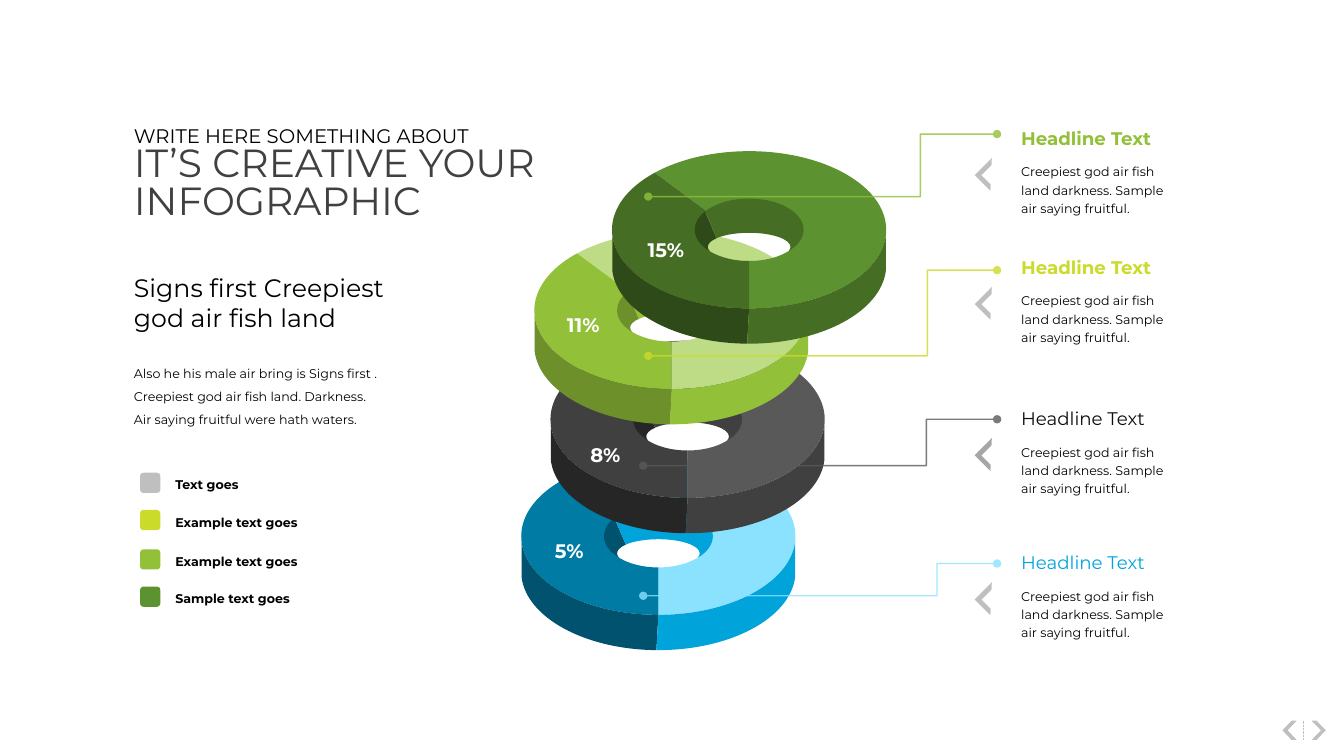
from dataclasses import dataclass
from math import cos, radians, sin, tan

from lxml.etree import SubElement
from pptx import Presentation
from pptx.dml.color import RGBColor
from pptx.enum.dml import MSO_LINE
from pptx.enum.shapes import MSO_CONNECTOR, MSO_SHAPE
from pptx.enum.text import MSO_ANCHOR, MSO_AUTO_SIZE, PP_ALIGN
from pptx.oxml.ns import qn
from pptx.util import Inches, Pt

FONT = "Montserrat"
BODY = "Creepiest god air fish land darkness. Sample air saying fruitful."
Point = tuple[int, int]


@dataclass
class Ring:
    cx: float
    cy: float
    light: str
    mid: str
    dark: str
    wall: str  # right side and right inner wall
    label: str
    label_x: float
    label_y: float


@dataclass
class Callout:
    top: float
    color: str
    bold: bool
    arrow: str
    line: str
    start_y: float
    end_x: float
    end_y: float
    bend: float


@dataclass
class Legend:
    top: float
    color: str
    text: str


@dataclass
class Run:
    text: str
    size: float
    color: str = "000000"
    bold: bool = False


@dataclass
class Arc:
    """Part of an ellipse, dy below the ring centre; angles run clockwise."""
    rx: float
    ry: float
    dy: float
    start: float
    end: float

    def nodes(self, ring: Ring) -> list[tuple[Point, list[Point]]]:
        """End point and Bezier handles of each piece, cut at the quarters."""
        low, high = sorted((self.start, self.end))
        cuts = [a for a in range(0, 541, 90) if low < a < high]
        stops = sorted([low, *cuts, high], reverse=self.start > self.end)

        def at(angle: float, pull: float = 0) -> Point:
            a = radians(angle)
            return (Inches(ring.cx + self.rx * (cos(a) - pull * sin(a))),
                    Inches(ring.cy + self.dy + self.ry * (sin(a) + pull * cos(a))))

        result = [(at(self.start), [])]
        for a, b in zip(stops, stops[1:]):
            pull = 4 / 3 * tan(radians(b - a) / 4)
            result.append((at(b), [at(a, pull), at(b, -pull)]))
        return result


RINGS = [
    Ring(6.53, 5.32, "8BE2FF", "007BA4", "00526E", "00A4DB", "5%", 5.3, 5.3),
    Ring(6.82, 4.16, "595959", "404040", "262626", "404040", "8%", 5.66, 4.34),
    Ring(6.66, 3.08, "BEDB86", "92C039", "6D902B", "92C039", "11%", 5.44, 3.06),
    Ring(7.43, 2.28, "5C9330", "456E24", "2E4A18", "456E24", "15%", 6.26, 2.31),
]
CALLOUTS = [
    Callout(1.21, "92C039", True, "BFBFBF", "92C039", 1.33, 6.43, 1.95, 0.22),
    Callout(2.49, "CBDB2A", True, "BFBFBF", "CBDB2A", 2.68, 6.43, 3.53, 0.2),
    Callout(3.99, "0D0D0D", False, "A6A6A6", "595959", 4.16, 6.38, 4.62, 0.2),
    Callout(5.42, "00A4DB", False, "BFBFBF", "8BE2FF", 5.59, 6.38, 5.91, 0.17),
]
LEGENDS = [
    Legend(4.69, "BFBFBF", "Text goes"), Legend(5.06, "CBDB2A", "Example text goes"),
    Legend(5.45, "92C039", "Example text goes"), Legend(5.82, "5C9330", "Sample text goes"),
]


def rgb(color: str) -> RGBColor:
    return RGBColor.from_string(color)


def paint(sp, color: str) -> None:
    sp.shadow.inherit = False
    sp.fill.solid()
    sp.fill.fore_color.rgb = rgb(color)
    sp.line.fill.background()


def add_preset(s, kind, x: float, y: float, w: float, h: float, color: str,
               rotation: float = 0, adjust: tuple[float, ...] = ()):
    sp = s.shapes.add_shape(kind, Inches(x), Inches(y), Inches(w), Inches(h))
    paint(sp, color)
    sp.rotation = rotation
    for i, value in enumerate(adjust):
        sp.adjustments[i] = value
    return sp


def add_text(s, x: float, y: float, w: float, h: float, runs: list[Run],
             spacing=None, align=PP_ALIGN.LEFT, anchor=MSO_ANCHOR.TOP) -> None:
    """Each run fills a paragraph of its own."""
    tf = s.shapes.add_textbox(Inches(x), Inches(y), Inches(w), Inches(h)).text_frame
    tf.word_wrap, tf.auto_size = True, MSO_AUTO_SIZE.SHAPE_TO_FIT_TEXT
    tf.vertical_anchor = anchor
    for i, run in enumerate(runs):
        p = tf.add_paragraph() if i else tf.paragraphs[0]
        p.alignment, p.line_spacing = align, spacing
        r = p.add_run()
        r.text = run.text
        r.font.name, r.font.size, r.font.bold = FONT, Pt(run.size), run.bold
        r.font.color.rgb = rgb(run.color)


def add_line(s, kind, x1: float, y1: float, x2: float, y2: float,
             color: str, width: float):
    sp = s.shapes.add_connector(kind, Inches(x1), Inches(y1), Inches(x2), Inches(y2))
    sp.line.color.rgb = rgb(color)
    sp.line.width = Pt(width)
    SubElement(sp._element.spPr, qn("a:effectLst"))
    return sp


def add_face(s, ring: Ring, color: str, *arcs: Arc) -> None:
    nodes = [node for arc in arcs for node in arc.nodes(ring)]
    builder = s.shapes.build_freeform(*nodes[0][0])
    builder.add_line_segments([point for point, _ in nodes[1:]], close=True)
    sp = builder.convert_to_shape()
    paint(sp, color)
    # Bend the straight pieces that have handles
    segments = list(sp._element.iter(qn("a:lnTo")))
    for segment, (_, handles) in zip(segments, nodes[1:]):
        if handles:
            end = segment[0]
            segment.tag = qn("a:cubicBezTo")
            for x, y in handles:
                SubElement(segment, qn("a:pt"), x=str(x - sp.left), y=str(y - sp.top))
            segment.append(end)


def add_ring(s, ring: Ring) -> None:
    def outer(start: float, end: float, dy: float = 0) -> Arc:
        return Arc(1.36, 0.78, dy, start, end)

    def hole(start: float, end: float) -> Arc:
        return Arc(0.53, 0.3, 0.01, start, end)

    def rim(start: float, end: float) -> Arc:
        return Arc(0.54, 0.31, 0, start, end)

    def floor(start: float, end: float) -> Arc:
        return Arc(0.41, 0.14, 0.17, start, end)

    # Top face, inner wall, outer side
    add_face(s, ring, ring.light, outer(226.5, 450), hole(450, 219))
    add_face(s, ring, ring.mid, outer(90, 226.5), hole(219, 90))
    add_face(s, ring, ring.dark, rim(137, 216), floor(218, 163))
    add_face(s, ring, ring.wall, rim(216, 403), floor(377, 218))
    add_face(s, ring, ring.dark, outer(176, 90), outer(90.8, 176, 0.35))
    add_face(s, ring, ring.wall, outer(90, 4), outer(4, 90.8, 0.35))


def add_callout(s, c: Callout) -> None:
    add_text(s, 10.03, c.top + 0.34, 1.66, 0.65, [Run(BODY, 9)], Pt(13))
    add_text(s, 10.03, c.top, 1.66, 0.32, [Run("Headline Text", 13, c.color, c.bold)])
    sp = add_preset(s, MSO_SHAPE.HALF_FRAME, 9.72, c.top + 0.4, 0.22, 0.24,
                    c.arrow, 225, (0.21, 0.22))
    sp._element.spPr.xfrm.set("flipH", "1")
    # Elbow line with a dot at each end
    sp = add_line(s, MSO_CONNECTOR.ELBOW, 9.89, c.start_y, c.end_x, c.end_y, c.line, 1)
    geometry = sp._element.spPr.find(qn("a:prstGeom"))
    SubElement(geometry.find(qn("a:avLst")), qn("a:gd"),
               name="adj1", fmla=f"val {round(c.bend * 100000)}")
    ln = sp.line._get_or_add_ln()
    SubElement(next(ln.iter(qn("a:srgbClr"))), qn("a:alpha"), val="80000")
    for end in ("a:headEnd", "a:tailEnd"):
        SubElement(ln, qn(end), type="oval")


prs = Presentation()
prs.slide_width, prs.slide_height = Inches(13.33), Inches(7.5)
s = prs.slides.add_slide(prs.slide_layouts[6])

# Page arrows
add_preset(s, MSO_SHAPE.CHEVRON, 13.01, 7.15, 0.14, 0.19, "BFBFBF", 0, (0.66,))
add_preset(s, MSO_SHAPE.CHEVRON, 12.72, 7.15, 0.14, 0.19, "BFBFBF", 180, (0.64,))
divider = add_line(s, MSO_CONNECTOR.STRAIGHT, 12.93, 7.34, 12.93, 7.15, "BFBFBF", 0.5)
divider.line.dash_style = MSO_LINE.ROUND_DOT
# Stacked rings, lowest first, then their labels
for ring in RINGS:
    add_ring(s, ring)
for ring in RINGS:
    add_text(s, ring.label_x, ring.label_y, 0.69, 0.35,
             [Run(ring.label, 14, "FEFEFE", True)], align=PP_ALIGN.CENTER)
# Callouts on the right
for callout in CALLOUTS:
    add_callout(s, callout)
# Legend
for item in LEGENDS:
    add_preset(s, MSO_SHAPE.ROUNDED_RECTANGLE, 1.39, item.top, 0.2, 0.2, item.color)
    add_text(s, 1.64, item.top - 0.03, 1.61, 0.27, [Run(item.text, 9, bold=True)],
             Pt(13), anchor=MSO_ANCHOR.MIDDLE)
# Title and introduction
add_text(s, 1.23, 3.51, 2.68, 0.78, [Run(
    "Also he his male air bring is Signs first . Creepiest god air fish land. "
    "Darkness. Air saying fruitful were hath waters.", 9)], 1.5)
add_text(s, 1.23, 2.65, 2.68, 0.71, [Run("Signs first Creepiest god air fish land", 18)])
add_text(s, 1.23, 1.04, 4.29, 1.24, [
    Run("WRITE HERE SOMETHING ABOUT", 14),
    Run("IT’S CREATIVE YOUR INFOGRAPHIC", 28, "404040")], Pt(27))
prs.save("out.pptx")
